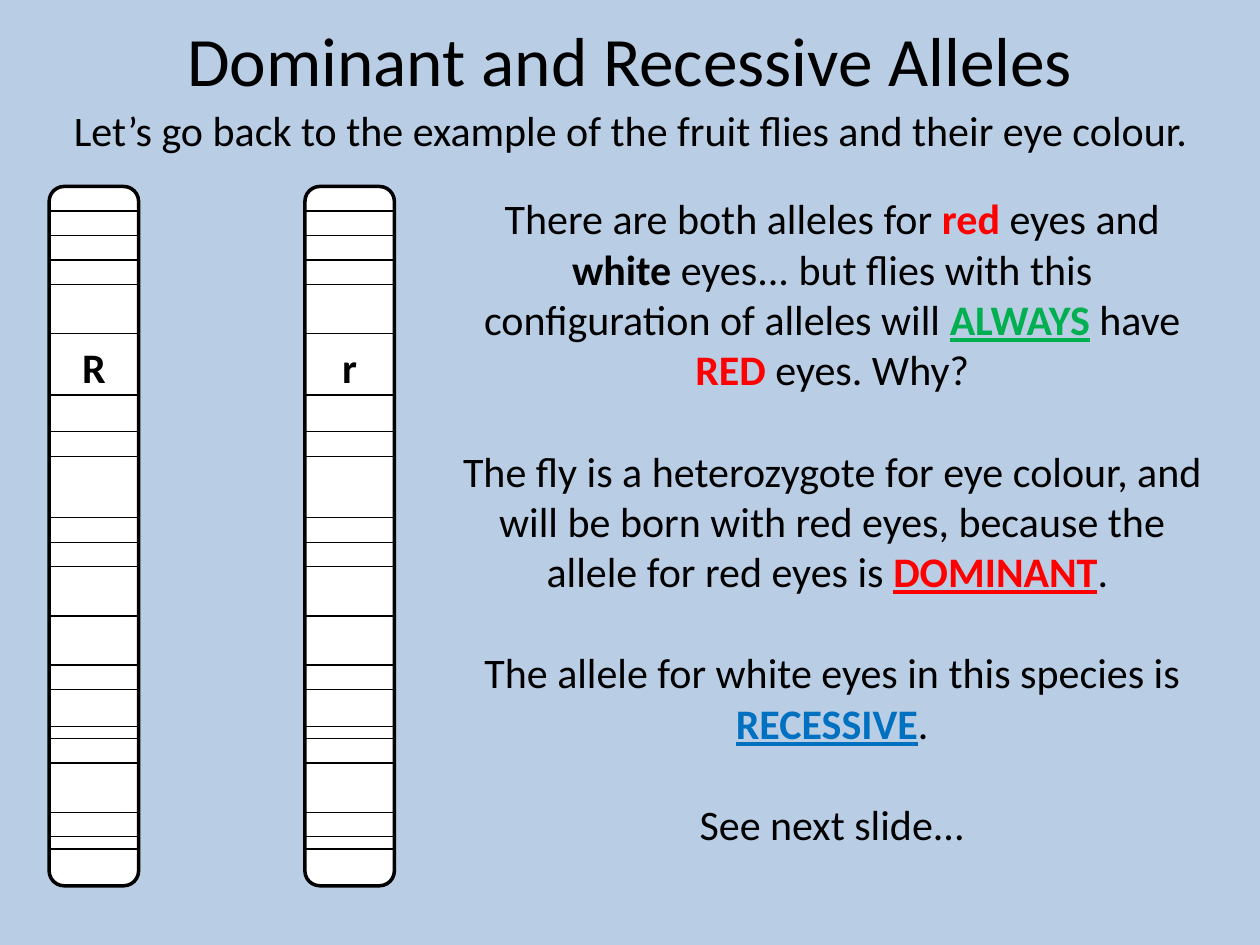
"""Build the slide on dominant and recessive alleles."""
from dataclasses import dataclass

import pptx
import pptx.dml.color
import pptx.enum.shapes
import pptx.enum.text
import pptx.oxml.ns
import pptx.util
from lxml import etree
from pptx.util import Inches


@dataclass(frozen=True)
class Theme:
    """Colours, font and type sizes."""
    font: str = "Calibri"
    background: str = "B9CDE5"
    white: str = "FFFFFF"
    black: str = "000000"
    red: str = "FF0000"
    green: str = "00B050"
    blue: str = "0070C0"
    title_size: float = 39.6
    text_size: float = 24
    paragraph_gap: float = 29
    outline: float = 2
    band: float = 0.75


@dataclass(frozen=True)
class Span:
    """A piece of text with one look."""
    text: str
    color: str = Theme.black
    bold: bool = False
    underline: bool = False
    size: float = Theme.text_size


@dataclass(frozen=True)
class Box:
    """A rectangle in inches."""
    left: float
    top: float
    width: float
    height: float

    def lengths(self) -> tuple:
        """Return the rectangle as slide lengths."""
        return tuple(Inches(v) for v in (self.left, self.top, self.width, self.height))


@dataclass(frozen=True)
class Chromosome:
    """A banded chromosome carrying one allele."""
    allele: str
    left: float


THEME = Theme()
CHROMOSOMES = (Chromosome("R", 0.39), Chromosome("r", 2.42))
CHROMOSOME_TOP, CHROMOSOME_WIDTH, CHROMOSOME_HEIGHT = 1.48, 0.71, 5.55
BAND_UNITS = (2, 4, 6, 8, 12, 17, 20, 22, 27, 29, 31, 35, 39, 41, 44, 45, 47, 51, 53, 54)
TOTAL_UNITS = 57
TITLE = (Span("Dominant and Recessive Alleles", size=THEME.title_size),)
INTRODUCTION = (Span("Let’s go back to the example of the fruit flies and their eye colour."),)
EXPLANATION = (
    (
        Span("There are both alleles for "),
        Span("red ", THEME.red, True),
        Span("eyes and "),
        Span("white ", bold=True),
        Span("eyes... but flies with this configuration of alleles will "),
        Span("ALWAYS", THEME.green, True, True),
        Span(" have "),
        Span("RED", THEME.red, True),
        Span(" eyes. Why?"),
    ),
    (
        Span("The fly is a heterozygote for eye colour, and will be born with red eyes, "
             "because the allele for red eyes is "),
        Span("DOMINANT", THEME.red, True, True),
        Span(". "),
    ),
    (
        Span("The allele for white eyes in this species is "),
        Span("RECESSIVE", THEME.blue, True, True),
        Span("."),
    ),
    (Span("See next slide..."),),
)


def rgb(color: str) -> pptx.dml.color.RGBColor:
    """Turn a hex string into a colour."""
    return pptx.dml.color.RGBColor.from_string(color)


def write(para, spans: tuple[Span, ...]) -> None:
    """Fill a centred paragraph run by run."""
    para.alignment = pptx.enum.text.PP_ALIGN.CENTER
    for span in spans:
        run = para.add_run()
        run.text = span.text
        run.font.name = THEME.font
        run.font.size = pptx.util.Pt(span.size)
        run.font.bold = span.bold
        run.font.underline = span.underline
        run.font.color.rgb = rgb(span.color)


def fill_placeholder(shape, box: Box, spans: tuple[Span, ...]) -> None:
    """Move a placeholder and write its text."""
    shape.left, shape.top, shape.width, shape.height = box.lengths()
    shape.text_frame.auto_size = pptx.enum.text.MSO_AUTO_SIZE.NONE
    write(shape.text_frame.paragraphs[0], spans)


def remove_bullet(para) -> None:
    """Drop the bullet but keep a hanging indent."""
    properties = para._p.get_or_add_pPr()
    properties.set("marL", str(Inches(0.38)))
    properties.set("indent", str(Inches(-0.38)))
    etree.SubElement(properties, pptx.oxml.ns.qn("a:buNone"))


def add_text(shapes, box: Box, paragraphs: tuple) -> None:
    """Add a wrapped text box with a gap between paragraphs."""
    frame = shapes.add_textbox(*box.lengths()).text_frame
    frame.word_wrap = True
    for index, spans in enumerate(paragraphs):
        para = frame.add_paragraph() if index else frame.paragraphs[0]
        if index:
            para.space_before = pptx.util.Pt(THEME.paragraph_gap)
        write(para, spans)


def add_band(shapes, left: float, top: float) -> None:
    """Add one band across a chromosome."""
    band = shapes.add_connector(
        pptx.enum.shapes.MSO_CONNECTOR.STRAIGHT,
        Inches(left), Inches(top), Inches(left + CHROMOSOME_WIDTH), Inches(top))
    band.line.color.rgb = rgb(THEME.black)
    band.line.width = pptx.util.Pt(THEME.band)
    etree.SubElement(band._element.spPr, pptx.oxml.ns.qn("a:effectLst"))


def add_chromosome(page, chromosome: Chromosome) -> None:
    """Add a grouped chromosome with its bands and allele."""
    shapes = page.shapes.add_group_shape().shapes
    box = Box(chromosome.left, CHROMOSOME_TOP, CHROMOSOME_WIDTH, CHROMOSOME_HEIGHT)
    body = shapes.add_shape(pptx.enum.shapes.MSO_SHAPE.ROUNDED_RECTANGLE, *box.lengths())
    body.shadow.inherit = False
    body.fill.solid()
    body.fill.fore_color.rgb = rgb(THEME.white)
    body.line.color.rgb = rgb(THEME.black)
    body.line.width = pptx.util.Pt(THEME.outline)
    for units in BAND_UNITS:
        add_band(shapes, box.left, box.top + box.height * units / TOTAL_UNITS)
    label = Box(box.left, 2.66, box.width, 0.63)
    add_text(shapes, label, ((Span(chromosome.allele, bold=True),),))


def main() -> None:
    """Build and save the deck."""
    deck = pptx.Presentation()
    deck.slide_width, deck.slide_height = Inches(10), Inches(7.5)
    page = deck.slides.add_slide(deck.slide_layouts[1])
    page.background.fill.solid()
    page.background.fill.fore_color.rgb = rgb(THEME.background)
    fill_placeholder(page.shapes.title, Box(0.5, 0.23, 9, 0.47), TITLE)
    introduction = page.placeholders[1]
    fill_placeholder(introduction, Box(0.16, 0.78, 9.69, 6.56), INTRODUCTION)
    remove_bullet(introduction.text_frame.paragraphs[0])
    for chromosome in CHROMOSOMES:
        add_chromosome(page, chromosome)
    add_text(page.shapes, Box(3.52, 1.48, 6.17, 5.35), EXPLANATION)
    deck.save("out.pptx")


if __name__ == "__main__":
    main()
